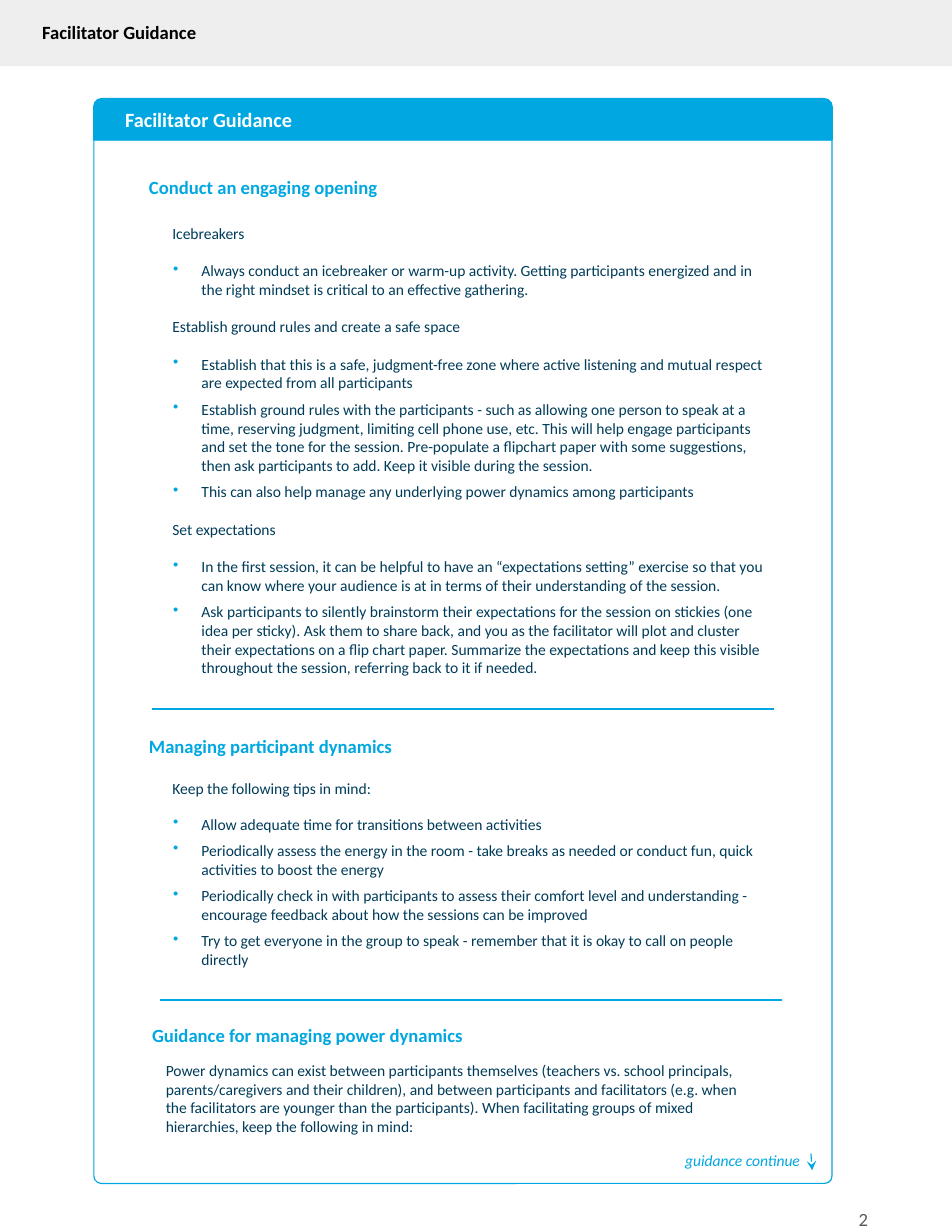
from dataclasses import dataclass

from lxml import etree
from pptx import Presentation
from pptx.dml.color import RGBColor
from pptx.enum.shapes import MSO_CONNECTOR, MSO_SHAPE
from pptx.enum.text import MSO_ANCHOR, MSO_AUTO_SIZE, PP_ALIGN
from pptx.oxml.ns import qn
from pptx.util import Cm, Pt

BLUE = RGBColor(0x00, 0xA7, 0xE1)
NAVY = RGBColor(0x00, 0x3C, 0x5A)
PALE = RGBColor(0xEE, 0xEE, 0xEE)
GREY = RGBColor(0x59, 0x59, 0x59)
WHITE = RGBColor(0xFF, 0xFF, 0xFF)
BLACK = RGBColor(0x00, 0x00, 0x00)

RECT, ROUND = MSO_SHAPE.RECTANGLE, MSO_SHAPE.ROUND_2_SAME_RECTANGLE
LINE = MSO_CONNECTOR.STRAIGHT
LEFT, MID, RIGHT = PP_ALIGN.LEFT, PP_ALIGN.CENTER, PP_ALIGN.RIGHT
TOP, CENTER = MSO_ANCHOR.TOP, MSO_ANCHOR.MIDDLE
FIXED, GROW = MSO_AUTO_SIZE.NONE, MSO_AUTO_SIZE.SHAPE_TO_FIT_TEXT

Box = tuple[float, float, float, float]
TIGHT: Box = (0, 0.03, 0, 0)
LOOSE: Box = (0.25, 0.25, 0.25, 0.25)

HEAD = {"size": Pt(12), "bold": True, "color": BLUE}
BODY = {"size": Pt(10), "color": NAVY}


@dataclass
class Para:
    text: str
    before: float = 0
    after: float = 0
    bullet: bool = False
    align: PP_ALIGN = LEFT


@dataclass
class Block:
    box: Box
    paras: list[Para]
    font: dict
    inset: Box = TIGHT
    anchor: MSO_ANCHOR = TOP
    fit: MSO_AUTO_SIZE = GROW


def item(text: str, before: float = 5, after: float = 0) -> Para:
    return Para(text, before, after, True)


def heading(left: float, top: float, text: str) -> Block:
    return Block((left, top, 7.54, 0.56), [Para(text, 7.4)], HEAD)


OPENING = [
    Para("Icebreakers", 12),
    item("Always conduct an icebreaker or warm-up activity. Getting participants "
         "energized and in the right mindset is critical to an effective gathering.", 12),
    Para("Establish ground rules and create a safe space", 12),
    item("Establish that this is a safe, judgment-free zone where active listening "
         "and mutual respect are expected from all participants", 12),
    item("Establish ground rules with the participants - such as allowing one person "
         "to speak at a time, reserving judgment, limiting cell phone use, etc. This "
         "will help engage participants and set the tone for the session. Pre-populate "
         "a flipchart paper with some suggestions, then ask participants to add. Keep "
         "it visible during the session."),
    item("This can also help manage any underlying power dynamics among participants"),
    Para("Set expectations", 12),
    item("In the first session, it can be helpful to have an “expectations setting” "
         "exercise so that you can know where your audience is at in terms of their "
         "understanding of the session.", 12),
    item("Ask participants to silently brainstorm their expectations for the session "
         "on stickies (one idea per sticky). Ask them to share back, and you as the "
         "facilitator will plot and cluster their expectations on a flip chart paper. "
         "Summarize the expectations and keep this visible throughout the session, "
         "referring back to it if needed.", after=5),
]

TIPS = [
    Para("Keep the following tips in mind:", 7.4),
    item("Allow adequate time for transitions between activities", 11),
    item("Periodically assess the energy in the room - take breaks as needed or "
         "conduct fun, quick activities to boost the energy"),
    item("Periodically check in with participants to assess their comfort level and "
         "understanding - encourage feedback about how the sessions can be improved"),
    item("Try to get everyone in the group to speak - remember that it is okay to "
         "call on people directly", after=5),
]

POWER = [Para(
    "Power dynamics can exist between participants themselves (teachers vs. school "
    "principals, parents/caregivers and their children), and between participants and "
    "facilitators (e.g. when the facilitators are younger than the participants). When "
    "facilitating groups of mixed hierarchies, keep the following in mind:", 12, 12)]

TITLE = Block((0, 0.23, 5.41, 1.45), [Para("Facilitator Guidance", align=MID)],
              HEAD | {"color": BLACK}, LOOSE, fit=FIXED)

BLOCKS = [
    Block((2.84, 2.41, 12.27, 1.07), [Para("Facilitator Guidance")],
          {"size": Pt(13), "bold": True, "color": WHITE}),
    heading(3.38, 3.96, "Conduct an engaging opening"),
    Block((3.91, 5.05, 13.49, 10.41), OPENING, BODY),
    heading(3.38, 16.64, "Managing participant dynamics"),
    Block((3.91, 17.63, 13.49, 4.39), TIPS, BODY),
    heading(3.45, 23.19, "Guidance for managing power dynamics"),
    Block((3.76, 24.03, 13.49, 1.75), POWER, BODY),
    Block((15.29, 25.88, 3.58, 0.94), [Para("guidance continue")],
          {"size": Pt(10), "italic": True, "color": BLUE}, LOOSE),
    Block((18.67, 26.54, 1.27, 2.21), [Para("2", align=RIGHT)],
          {"size": Pt(12), "color": GREY}, LOOSE, CENTER, FIXED),
]


def add_bullet(para) -> None:
    props = para._p.get_or_add_pPr()
    props.set("marL", str(Cm(0.66)))
    props.set("indent", str(Cm(-0.64)))
    tint = etree.SubElement(props, qn("a:buClr"))
    etree.SubElement(tint, qn("a:srgbClr"), val=str(BLUE))
    etree.SubElement(props, qn("a:buChar"), char="•")


def fill_text(shape, block: Block) -> None:
    """Place a text shape and write the block's paragraphs into it."""
    for name, size in zip(("left", "top", "width", "height"), block.box):
        setattr(shape, name, Cm(size))
    frame = shape.text_frame
    for side, size in zip(("left", "top", "right", "bottom"), block.inset):
        setattr(frame, f"margin_{side}", Cm(size))
    frame.word_wrap = True
    frame.auto_size = block.fit
    frame.vertical_anchor = block.anchor
    for i, part in enumerate(block.paras):
        para = frame.add_paragraph() if i else frame.paragraphs[0]
        para.alignment = part.align
        para.space_before, para.space_after = Pt(part.before), Pt(part.after)
        if part.bullet:
            add_bullet(para)
        run = para.add_run()
        run.text = part.text
        for name, value in ({"name": "Calibri"} | block.font).items():
            if name == "color":
                run.font.color.rgb = value
            else:
                setattr(run.font, name, value)


def add_panel(shapes, kind: MSO_SHAPE, box: Box, fill: RGBColor | None = None,
              edge: float = 0, bends: tuple = ()) -> None:
    panel = shapes.add_shape(kind, *map(Cm, box))
    panel.shadow.inherit = False
    for i, bend in enumerate(bends):
        panel.adjustments[i] = bend
    if fill is None:
        panel.fill.background()
    else:
        panel.fill.solid()
        panel.fill.fore_color.rgb = fill
    if edge:
        panel.line.color.rgb = BLUE
        panel.line.width = Pt(edge)
    else:
        panel.line.fill.background()


def add_rule(shapes, ends: Box, arrow: bool = False) -> None:
    rule = shapes.add_connector(LINE, *map(Cm, ends))
    rule.line.color.rgb = BLUE
    rule.line.width = Pt(0.75)
    if arrow:
        etree.SubElement(rule.line._get_or_add_ln(), qn("a:tailEnd"), type="stealth")
    etree.SubElement(rule._element.spPr, qn("a:effectLst"))


def main() -> None:
    deck = Presentation()
    deck.slide_width, deck.slide_height = Cm(21.59), Cm(27.94)
    shapes = deck.slides.add_slide(deck.slide_layouts[5]).shapes

    add_panel(shapes, ROUND, (2.13, 3.17, 16.74, 23.67), edge=0.75, bends=(0, 0.01))
    add_panel(shapes, ROUND, (2.13, 2.24, 16.74, 0.93), BLUE, 1, (0.19, 0))
    add_panel(shapes, RECT, (0, -0.05, 21.59, 1.55), PALE)

    title = shapes.title
    fill_text(title, TITLE)
    shapes._spTree.append(title._element)  # bring in front of the grey bar

    for block in BLOCKS:
        fill_text(shapes.add_textbox(0, 0, 0, 0), block)
    for left, top in ((3.45, 16.08), (3.63, 22.68)):
        add_rule(shapes, (left, top, left + 14.1, top))
    add_rule(shapes, (18.39, 26.16, 18.42, 26.54), arrow=True)
    deck.save("out.pptx")


if __name__ == "__main__":
    main()
